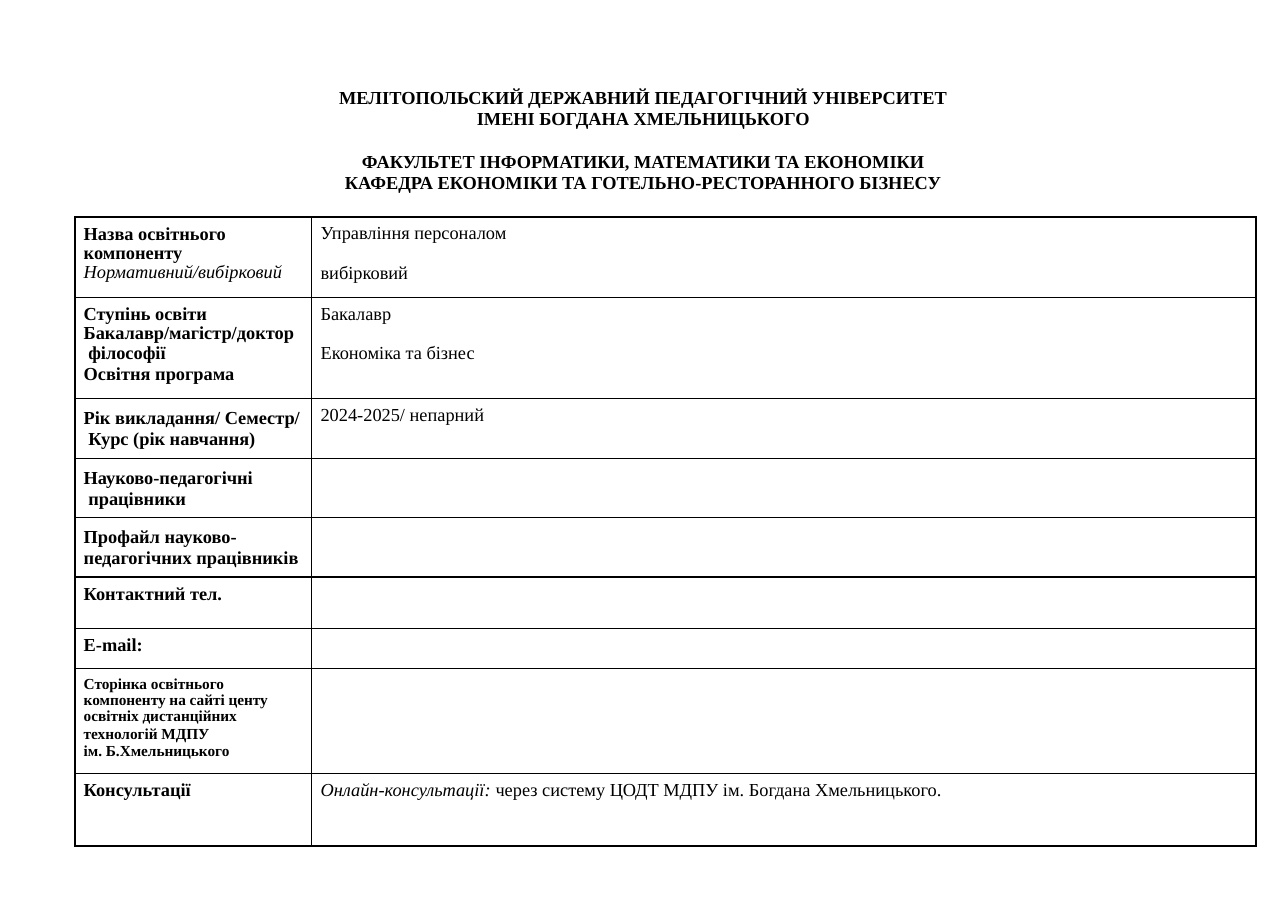
from dataclasses import dataclass

from lxml.etree import SubElement
from pptx import Presentation
from pptx.dml.color import RGBColor
from pptx.enum.text import MSO_ANCHOR, PP_ALIGN
from pptx.oxml import parse_xml
from pptx.oxml.ns import nsdecls, qn
from pptx.table import _Cell as Cell
from pptx.text.text import TextFrame
from pptx.util import Emu, Pt


@dataclass(frozen=True)
class Theme:
    font: str = "Times New Roman"
    ink: str = "000000"
    body: float = 12
    small: float = 10
    border: float = 1


@dataclass(frozen=True)
class Span:
    text: str
    bold: bool = False
    italic: bool = False


@dataclass(frozen=True)
class Para:
    spans: tuple[Span, ...]
    leading: float | Pt = 1.0
    before: float = 0
    size: float = Theme.body
    align: PP_ALIGN = PP_ALIGN.LEFT


@dataclass(frozen=True)
class Row:
    height: int
    label_top: int
    label: tuple[Para, ...]
    value: tuple[Para, ...] = ()


THEME = Theme()
PX_PER_INCH = 100
LEADING = Pt(13.8)
VALUE_TOP = 6


def px(n: int) -> Emu:
    return Emu(n * 914400 // PX_PER_INCH)


def bold(text: str, leading: float | Pt = 1.0, **options) -> Para:
    return Para((Span(text, bold=True),), leading, **options)


def plain(text: str, before: float = 0) -> Para:
    return Para((Span(text),), before=before)


HEADING = (
    bold("МЕЛІТОПОЛЬСКИЙ ДЕРЖАВНИЙ ПЕДАГОГІЧНИЙ УНІВЕРСИТЕТ\n"
         "ІМЕНІ БОГДАНА ХМЕЛЬНИЦЬКОГО", LEADING, align=PP_ALIGN.CENTER),
    bold("ФАКУЛЬТЕТ ІНФОРМАТИКИ, МАТЕМАТИКИ ТА ЕКОНОМІКИ\n"
         "КАФЕДРА ЕКОНОМІКИ ТА ГОТЕЛЬНО-РЕСТОРАННОГО БІЗНЕСУ", LEADING,
         before=14.2, align=PP_ALIGN.CENTER),
)

COLUMNS = (215, 857)
ROWS = (
    Row(73, 7,
        (Para((Span("Назва освітнього\nкомпоненту\n", bold=True),
               Span("Нормативний/вибірковий", italic=True)), 0.95),),
        (plain("Управління персоналом"), plain("вибірковий", before=12.5))),
    Row(92, 7,
        (bold("Ступінь освіти\nБакалавр/магістр/доктор\n філософії", 0.95),
         bold("Освітня програма", LEADING)),
        (plain("Бакалавр"), plain("Економіка та бізнес", before=12.3))),
    Row(54, 8, (bold("Рік викладання/ Семестр/\n Курс (рік навчання)", LEADING),),
        (plain("2024-2025/ непарний"),)),
    Row(54, 8, (bold("Науково-педагогічні\n працівники", LEADING),)),
    Row(54, 8, (bold("Профайл науково-\nпедагогічних працівників", LEADING),)),
    Row(47, 6, (bold("Контактний тел."),)),
    Row(36, 6, (bold("E-mail:"),)),
    Row(95, 7,
        (bold("Сторінка освітнього\nкомпоненту на сайті центу\n"
              "освітніх дистанційних", 0.96, size=THEME.small),
         bold("технологій МДПУ\nім. Б.Хмельницького", Pt(11.4),
              before=0.4, size=THEME.small))),
    Row(66, 6, (bold("Консультації"),),
        (Para((Span("Онлайн-консультації: ", italic=True),
               Span("через систему ЦОДТ МДПУ ім. Богдана Хмельницького."))),)),
)


def write(tf: TextFrame, paras: tuple[Para, ...]) -> None:
    for i, para in enumerate(paras):
        p = tf.add_paragraph() if i else tf.paragraphs[0]
        p.alignment = para.align
        p.line_spacing = para.leading
        p.space_before = Pt(para.before)
        for span in para.spans:
            for j, line in enumerate(span.text.split("\n")):
                if j:
                    p.add_line_break()
                if line:
                    r = p.add_run()
                    r.text = line
                    r.font.name = THEME.font
                    r.font.size = Pt(para.size)
                    r.font.bold = span.bold
                    r.font.italic = span.italic
                    r.font.color.rgb = RGBColor.from_string(THEME.ink)
        for br in p._p.findall(qn("a:br")):
            SubElement(br, qn("a:rPr"), sz=str(int(para.size * 100)))


def outline(cell: Cell) -> None:
    """Draw all four borders; they must come before the fill in the XML."""
    for i, side in enumerate("LRTB"):
        cell._tc.get_or_add_tcPr().insert(i, parse_xml(
            f'<a:ln{side} {nsdecls("a")} w="{Pt(THEME.border)}"><a:solidFill>'
            f'<a:srgbClr val="{THEME.ink}"/></a:solidFill></a:ln{side}>'))


def fill_cell(cell: Cell, paras: tuple[Para, ...], top: int) -> None:
    cell.margin_left, cell.margin_top = px(8), px(top)
    cell.margin_right = cell.margin_bottom = 0
    cell.vertical_anchor = MSO_ANCHOR.TOP
    cell.fill.background()
    outline(cell)
    write(cell.text_frame, paras)


def main() -> None:
    prs = Presentation()
    prs.slide_width, prs.slide_height = px(1169), px(827)
    s = prs.slides.add_slide(prs.slide_layouts[6])

    tf = s.shapes.add_textbox(px(305), px(76), px(558), px(99)).text_frame
    tf.word_wrap = True
    tf.margin_left = tf.margin_right = tf.margin_bottom = 0
    tf.margin_top = px(3)
    write(tf, HEADING)

    table = s.shapes.add_table(len(ROWS), len(COLUMNS), px(68), px(197),
                               px(sum(COLUMNS)),
                               px(sum(row.height for row in ROWS))).table
    table.first_row = table.horz_banding = False
    for column, width in zip(table.columns, COLUMNS):
        column.width = px(width)
    for i, row in enumerate(ROWS):
        table.rows[i].height = px(row.height)
        fill_cell(table.cell(i, 0), row.label, row.label_top)
        fill_cell(table.cell(i, 1), row.value, VALUE_TOP)

    prs.save("out.pptx")


if __name__ == "__main__":
    main()
